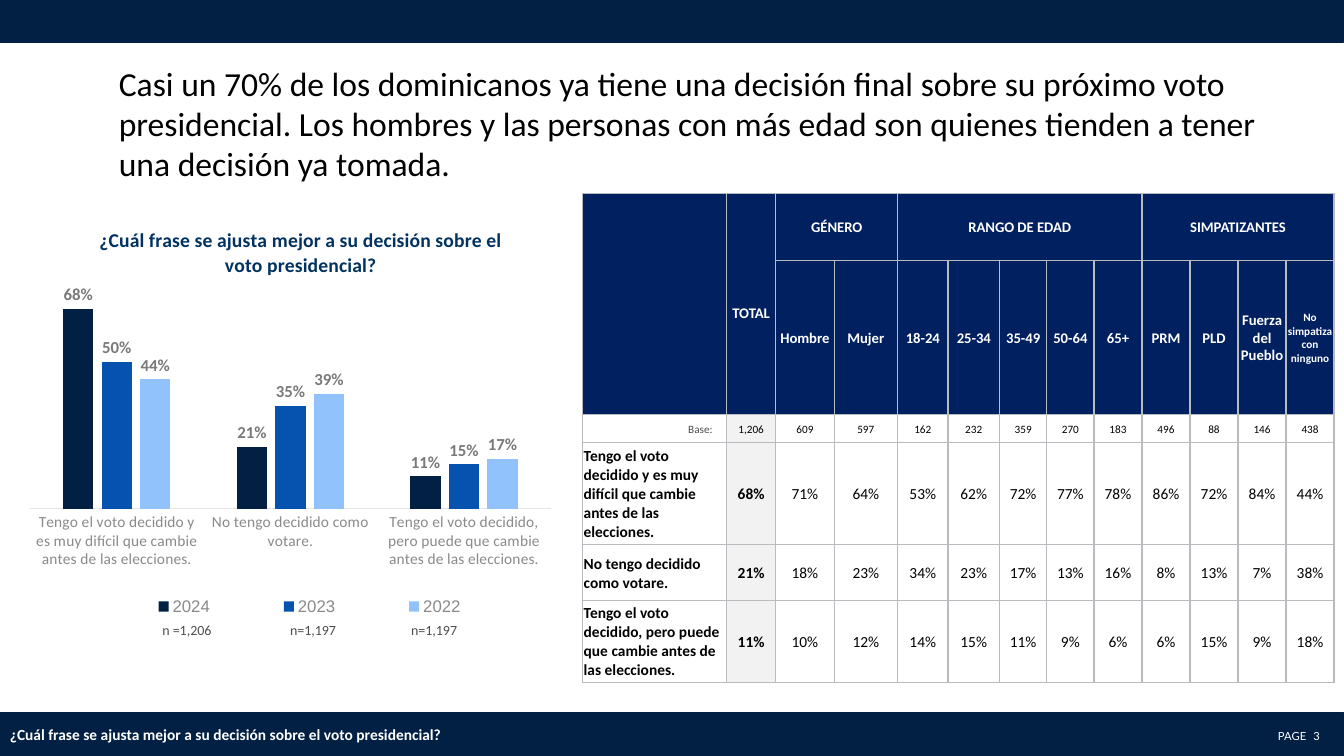
from lxml import etree
from pptx import Presentation
from pptx.chart.data import CategoryChartData
from pptx.dml.color import RGBColor
from pptx.enum.chart import XL_CHART_TYPE, XL_LABEL_POSITION, XL_LEGEND_POSITION, XL_TICK_MARK
from pptx.enum.shapes import MSO_SHAPE
from pptx.enum.text import MSO_ANCHOR, MSO_AUTO_SIZE, PP_ALIGN
from pptx.oxml.ns import qn
from pptx.util import Cm, Pt

COLUMNS = XL_CHART_TYPE.COLUMN_CLUSTERED
OUTSIDE = XL_LABEL_POSITION.OUTSIDE_END
LEGEND_RIGHT = XL_LEGEND_POSITION.RIGHT
NO_TICK = XL_TICK_MARK.NONE
RECT = MSO_SHAPE.RECTANGLE
TOP, MIDDLE = MSO_ANCHOR.TOP, MSO_ANCHOR.MIDDLE
NO_FIT = MSO_AUTO_SIZE.NONE
LEFT, CENTER, RIGHT = PP_ALIGN.LEFT, PP_ALIGN.CENTER, PP_ALIGN.RIGHT

NAVY, HEADER, TITLE_BLUE = "022044", "002060", "013260"
WHITE, BLACK, SHADE, BORDER = "FFFFFF", "000000", "F2F2F2", "B8BCC1"
TEXT, AXIS_TEXT, LABEL_TEXT, AXIS_LINE = "4D4D4F", "8A8A8D", "79797C", "E4E4E5"

HEADLINE = ("Casi un 70% de los dominicanos ya tiene una decisión final sobre su próximo "
            "voto presidencial. Los hombres y las personas con más edad son quienes "
            "tienden a tener una decisión ya tomada.")
QUESTION = "¿Cuál frase se ajusta mejor a su decisión sobre el voto presidencial?"
ANSWERS = ["Tengo el voto decidido y es muy difícil que cambie antes de las elecciones.",
           "No tengo decidido como votare.",
           "Tengo el voto decidido, pero puede que cambie antes de las elecciones."]
SERIES = [("2024", (0.68, 0.21, 0.11), NAVY),
          ("2023", (0.50, 0.35, 0.15), "0552AF"),
          ("2022", (0.44, 0.39, 0.17), "92C2FC")]
SAMPLES = [(3.12, "n =1,206"), (6.3, "n=1,197"), (9.35, "n=1,197")]

COL_WIDTHS = [3.63, 1.24, 1.47, 1.6, 1.27, 1.3, 1.19, 1.19] + [1.21] * 5
ROW_HEIGHTS = [1.68, 3.89, 0.71, 2.57, 1.4, 2.06]
GROUPS = [(2, 3, "GÉNERO"), (4, 8, "RANGO DE EDAD"), (9, 12, "SIMPATIZANTES")]
SEGMENTS = ["Hombre", "Mujer", "18-24", "25-34", "35-49", "50-64", "65+",
            "PRM", "PLD", "Fuerza del Pueblo", "No simpatiza con ninguno"]
BASES = ["1,206", "609", "597", "162", "232", "359", "270", "183", "496", "88", "146", "438"]
PERCENTS = [[68, 71, 64, 53, 62, 72, 77, 78, 86, 72, 84, 44],
            [21, 18, 23, 34, 23, 17, 13, 16, 8, 13, 7, 38],
            [11, 10, 12, 14, 15, 11, 9, 6, 6, 15, 9, 18]]


def rgb(hex_color):
    return RGBColor.from_string(hex_color)


def set_font(font, size, color, bold=False, name="Calibri"):
    font.name, font.size, font.bold = name, Pt(size), bold
    font.color.rgb = rgb(color)


def place(parent, index, **values):
    """Give a chart part a manual layout, in fractions of the chart."""
    for old in parent.findall(qn("c:layout")):
        parent.remove(old)
    layout = etree.Element(qn("c:layout"))
    manual = etree.SubElement(layout, qn("c:manualLayout"))
    for tag, value in values.items():
        etree.SubElement(manual, qn("c:" + tag)).set("val", str(value))
    parent.insert(index, layout)


def add_borders(cell):
    props = cell._tc.get_or_add_tcPr()
    for i, side in enumerate(("lnL", "lnR", "lnT", "lnB")):
        line = etree.Element(qn("a:" + side), w=str(Pt(1)))
        fill = etree.SubElement(line, qn("a:solidFill"))
        etree.SubElement(fill, qn("a:srgbClr"), val=BORDER)
        props.insert(i, line)


class SlideBuilder:
    def __init__(self, slide):
        self.slide = slide

    def fill_text(self, tf, text, size, color, bold=False, align=LEFT, name="Calibri"):
        tf.text = text
        tf.word_wrap = True
        p = tf.paragraphs[0]
        p.alignment = align
        set_font(p.runs[0].font, size, color, bold, name)

    def bar(self, top):
        sp = self.slide.shapes.add_shape(RECT, 0, Cm(top), Cm(33.87), Cm(1.14))
        sp.shadow.inherit = False
        sp.fill.solid()
        sp.fill.fore_color.rgb = rgb(NAVY)
        sp.line.color.rgb = rgb(NAVY)
        sp.line.width = Pt(0.75)

    def title(self, text, left, top, width, height):
        sp = self.slide.shapes.title
        sp.left, sp.top, sp.width, sp.height = Cm(left), Cm(top), Cm(width), Cm(height)
        self.fill_text(sp.text_frame, text, 24, BLACK)
        sp.text_frame.vertical_anchor = TOP
        sp.text_frame.auto_size = NO_FIT

    def text(self, text, left, top, width, height, size, color, **style):
        sp = self.slide.shapes.add_textbox(Cm(left), Cm(top), Cm(width), Cm(height))
        self.fill_text(sp.text_frame, text, size, color, **style)
        return sp.text_frame

    def page_text(self, text, left, width, align):
        tf = self.text(text, left, 18.21, width, 0.61, 8, WHITE, align=align, name="Lato")
        tf.margin_left = tf.margin_right = tf.margin_top = tf.margin_bottom = 0
        tf.vertical_anchor = MIDDLE
        tf.paragraphs[0].line_spacing = 1.2

    def chart(self, left, top, width, height):
        data = CategoryChartData(number_format="0%")
        data.categories = ANSWERS
        for name, values, _ in SERIES:
            data.add_series(name, values)
        chart = self.slide.shapes.add_chart(
            COLUMNS, Cm(left), Cm(top), Cm(width), Cm(height), data).chart
        set_font(chart.font, 10, TEXT, name="Arial")

        chart.has_title = True
        self.fill_text(chart.chart_title.text_frame, QUESTION, 14, TITLE_BLUE, True, CENTER)
        place(chart.chart_title._element, 1, xMode="edge", yMode="edge", x=0.14, y=0.15)
        place(chart._chartSpace.chart.plotArea, 0, layoutTarget="inner", xMode="edge",
              yMode="edge", x=0.02, y=0.24, w=0.95, h=0.42)

        chart.has_legend = True
        chart.legend.position = LEGEND_RIGHT
        chart.legend.include_in_layout = False
        set_font(chart.legend.font, 12, AXIS_TEXT, name="Arial")
        place(chart.legend._element, 1, xMode="edge", yMode="edge",
              x=0.13, y=0.8, w=0.8, h=0.07)

        axis = chart.category_axis
        axis.major_tick_mark = NO_TICK
        axis.format.line.color.rgb = rgb(AXIS_LINE)
        axis.format.line.width = Pt(0.75)
        set_font(axis.tick_labels.font, 11, AXIS_TEXT)
        axis = chart.value_axis
        axis.visible = axis.has_major_gridlines = False
        axis.minimum_scale, axis.maximum_scale = 0, 0.8

        plot = chart.plots[0]
        plot.gap_width, plot.overlap, plot.vary_by_categories = 219, -27, False
        for series, (_, _, color) in zip(plot.series, SERIES):
            series.format.fill.solid()
            series.format.fill.fore_color.rgb = rgb(color)
            labels = series.data_labels
            labels.show_value = True
            labels.number_format, labels.number_format_is_linked = "0%", False
            labels.position = OUTSIDE
            set_font(labels.font, 12, LABEL_TEXT, True)

    def cell(self, cell, text, size, color, bold=False, align=CENTER):
        self.fill_text(cell.text_frame, text, size, color, bold, align)

    def table(self, left, top):
        table = self.slide.shapes.add_table(
            len(ROW_HEIGHTS), len(COL_WIDTHS), Cm(left), Cm(top),
            Cm(sum(COL_WIDTHS)), Cm(sum(ROW_HEIGHTS))).table
        table.first_row = table.horz_banding = False
        for column, width in zip(table.columns, COL_WIDTHS):
            column.width = Cm(width)
        for r, height in enumerate(ROW_HEIGHTS):
            table.rows[r].height = Cm(height)
            for c in range(len(COL_WIDTHS)):
                cell = table.cell(r, c)
                cell.vertical_anchor = MIDDLE
                cell.margin_left = cell.margin_right = cell.margin_top = Cm(0.03)
                cell.margin_bottom = 0
                if r < 2 or c == 1:
                    cell.fill.solid()
                    cell.fill.fore_color.rgb = rgb(HEADER if r < 2 else SHADE)
                else:
                    cell.fill.background()
                add_borders(cell)

        for c in (0, 1):
            table.cell(0, c).merge(table.cell(1, c))
        self.cell(table.cell(0, 1), "TOTAL", 10.5, WHITE, True)
        table.cell(0, 1).margin_top = Cm(0.48)
        for first, last, text in GROUPS:
            table.cell(0, first).merge(table.cell(0, last))
            self.cell(table.cell(0, first), text, 10.5, WHITE, True)
        for c, text in enumerate(SEGMENTS, 2):
            size = 8 if c == len(COL_WIDTHS) - 1 else 10.5
            self.cell(table.cell(1, c), text, size, WHITE, True)

        self.cell(table.cell(2, 0), "Base:", 8, TEXT, align=RIGHT)
        table.cell(2, 0).margin_right = Cm(0.35)
        for c, text in enumerate(BASES, 1):
            self.cell(table.cell(2, c), text, 8, BLACK)
        for r, (answer, values) in enumerate(zip(ANSWERS, PERCENTS), 3):
            self.cell(table.cell(r, 0), answer, 11, BLACK, True, LEFT)
            for c, value in enumerate(values, 1):
                self.cell(table.cell(r, c), f"{value}%", 11, BLACK, c == 1)


def main():
    prs = Presentation()
    prs.slide_width, prs.slide_height = Cm(33.87), Cm(19.05)
    s = SlideBuilder(prs.slides.add_slide(prs.slide_layouts[5]))
    s.bar(-0.08)
    s.bar(17.96)
    s.page_text("PAGE", 29.59, 3.33, RIGHT)
    s.page_text("3", 33.1, 0.43, LEFT)
    s.text(QUESTION, 0, 18.14, 31.95, 0.74, 11, WHITE, bold=True)
    s.title(HEADLINE, 2.74, 1.45, 29.21, 3.68)
    s.chart(0.48, 3.51, 13.82, 14.1)
    s.table(14.68, 4.88)
    for left, text in SAMPLES:
        s.text(text, left, 15.54, 3.18, 0.69, 10, TEXT, align=CENTER)
    prs.save("out.pptx")


if __name__ == "__main__":
    main()
